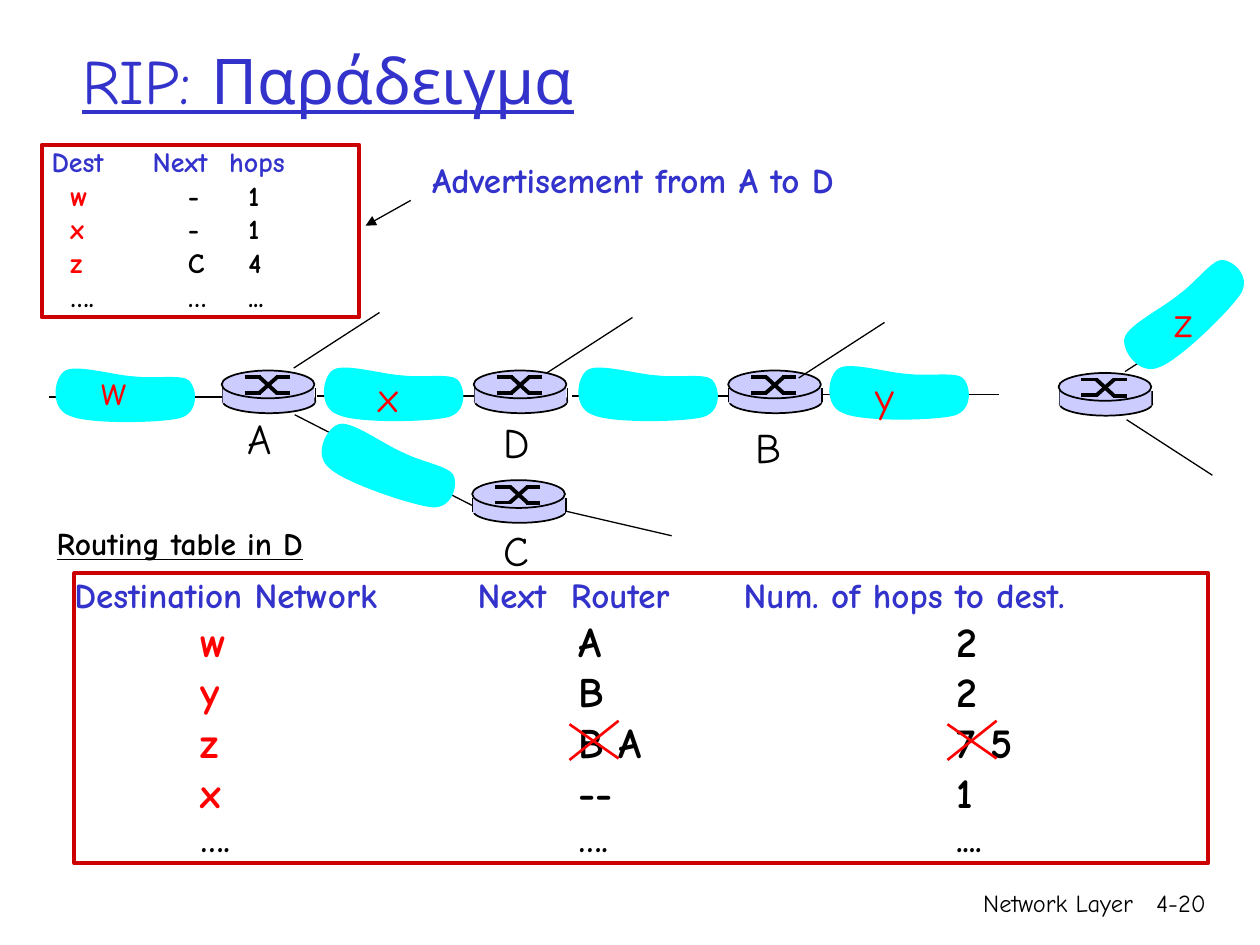
from lxml import etree
from pptx import Presentation
from pptx import util as u
from pptx.dml.color import RGBColor
from pptx.enum import shapes, text
from pptx.oxml import ns

FONT = "Comic Neue"
BLACK, BLUE, RED = "000000", "3333CC", "FF0000"
FRAME, BODY, CLOUD = "CC0000", "CCCCFF", "00FFFF"

# Lengths are centimetres throughout
CLOUD_SIZE = (3.05, 1.22)
CLOUD_START = (1.73, 0.25)
CLOUD_CURVES = [
    ((1.32, 0.23), (0.56, 0), (0.33, 0.13)),
    ((0.1, 0.25), (0, 0.89), (0.41, 1.04)),
    ((0.79, 1.22), (2.24, 1.19), (2.64, 1.09)),
    ((3.05, 0.97), (2.97, 0.46), (2.82, 0.33)),
    ((2.67, 0.2), (2.13, 0.3), CLOUD_START),
]
ROUTER_CROSS = [
    (0.46, 0.13, 0.79, 0.13), (1.09, 0.46, 1.37, 0.46), (0.76, 0.13, 1.12, 0.46),
    (0.46, 0.45, 0.79, 0.45), (1.09, 0.13, 1.37, 0.13), (0.76, 0.45, 1.12, 0.13),
]


def color(value):
    return RGBColor.from_string(value)


class Sketch:
    def __init__(self, slide):
        self.slide = slide

    def style(self, span, size, shade, bold=False, underline=False):
        span.font.name = FONT
        span.font.size = u.Pt(size)
        span.font.bold = bold
        span.font.underline = underline
        span.font.color.rgb = color(shade)

    def title(self, words, left, top, width, height):
        box = self.slide.shapes.title
        box.left, box.top, box.width, box.height = map(u.Cm, (left, top, width, height))
        box.text_frame.text = words
        box.text_frame.vertical_anchor = text.MSO_ANCHOR.MIDDLE
        para = box.text_frame.paragraphs[0]
        para.alignment = text.PP_ALIGN.LEFT
        self.style(para.runs[0], 36, BLUE, underline=True)

    def label(self, words, left, top, width, height=1.27, size=24, shade=BLACK,
              wrap=False, align=text.PP_ALIGN.LEFT, **look):
        box = self.slide.shapes.add_textbox(*map(u.Cm, (left, top, width, height)))
        box.text_frame.word_wrap = wrap
        box.text_frame.text = words
        para = box.text_frame.paragraphs[0]
        para.alignment = align
        self.style(para.runs[0], size, shade, **look)

    def line(self, x1, y1, x2, y2, shade=BLACK, weight=0.75, arrow=False):
        link = self.slide.shapes.add_connector(
            shapes.MSO_CONNECTOR.STRAIGHT, *map(u.Cm, (x1, y1, x2, y2)))
        link.line.color.rgb = color(shade)
        link.line.width = u.Pt(weight)
        if arrow:
            etree.SubElement(link.line._get_or_add_ln(), ns.qn("a:tailEnd"), type="triangle")
        etree.SubElement(link._element.spPr, ns.qn("a:effectLst"))

    def solid(self, kind, left, top, width, height, fill=BODY, edge=BLACK, weight=1):
        shape = self.slide.shapes.add_shape(kind, *map(u.Cm, (left, top, width, height)))
        shape.shadow.inherit = False
        if fill:
            shape.fill.solid()
            shape.fill.fore_color.rgb = color(fill)
        else:
            shape.fill.background()
        if edge:
            shape.line.color.rgb = color(edge)
            shape.line.width = u.Pt(weight)
        else:
            shape.line.fill.background()
        return shape

    def router(self, x, y):
        oval, block = shapes.MSO_SHAPE.OVAL, shapes.MSO_SHAPE.RECTANGLE
        self.solid(oval, x + 0.02, y + 0.38, 1.87, 0.48)
        for side in (0.02, 1.89):
            self.line(x + side, y + 0.36, x + side, y + 0.64, weight=1)
        self.solid(block, x + 0.02, y + 0.36, 1.85, 0.3, edge=None)
        self.solid(oval, x, y, 1.87, 0.56)
        for x1, y1, x2, y2 in ROUTER_CROSS:
            self.line(x + x1, y + y1, x + x2, y + y2, weight=2.25)

    def cloud(self, x, y, rotation=0):
        width, height = map(u.Cm, CLOUD_SIZE)
        builder = self.slide.shapes.build_freeform(u.Cm(x), u.Cm(y))
        builder.add_line_segments([(u.Cm(x) + width, u.Cm(y) + height)])
        shape = builder.convert_to_shape()
        # Fill the frame with curves, which the builder cannot draw
        outline = next(shape._element.iter(ns.qn("a:path")))
        for step in list(outline):
            outline.remove(step)
        for tag, points in [("a:moveTo", [CLOUD_START])] + [
                ("a:cubicBezTo", curve) for curve in CLOUD_CURVES]:
            step = etree.SubElement(outline, ns.qn(tag))
            for across, down in points:
                etree.SubElement(step, ns.qn("a:pt"),
                                 x=str(int(u.Cm(across))), y=str(int(u.Cm(down))))
        etree.SubElement(outline, ns.qn("a:close"))
        shape.rotation = rotation
        shape.shadow.inherit = False
        shape.fill.solid()
        shape.fill.fore_color.rgb = color(CLOUD)
        shape.line.fill.background()

    def listing(self, rows, left, top, width, height, head_stops, stops, sizes):
        """Framed rows whose columns are set by tab stops."""
        box = self.solid(shapes.MSO_SHAPE.RECTANGLE, left, top, width, height,
                         fill=None, edge=FRAME, weight=2.25)
        frame = box.text_frame
        frame.margin_left = frame.margin_right = frame.margin_top = frame.margin_bottom = 0
        frame.vertical_anchor = text.MSO_ANCHOR.TOP
        frame.word_wrap = True
        for r, words in enumerate(rows):
            para = frame.add_paragraph() if r else frame.paragraphs[0]
            para.alignment = text.PP_ALIGN.LEFT
            places = stops if r else head_stops
            tabs = etree.SubElement(para._p.get_or_add_pPr(), ns.qn("a:tabLst"))
            for place in filter(None, places):
                etree.SubElement(tabs, ns.qn("a:tab"), pos=str(int(u.Cm(place))), algn="l")
            first = BLUE if r == 0 else BLACK if r == len(rows) - 1 else RED
            rest = BLACK if r else BLUE
            lead = "\t" if places[0] else ""
            for words_part, shade in ((lead + words[0], first),
                                      ("\t" + "\t".join(words[1:]), rest)):
                span = para.add_run()
                span.text = words_part
                self.style(span, sizes[r], shade, bold=True)


def main():
    deck = Presentation()
    deck.slide_width, deck.slide_height = u.Cm(25.4), u.Cm(19.05)
    page = deck.slides.add_slide(deck.slide_layouts[5])
    sketch = Sketch(page)

    # Title and footer
    sketch.title("RIP: Παράδειγμα", 1.4, 0, 21.59, 3.18)
    for words, left, width in (("Network Layer", 15.04, 8.05), ("4-20", 22.68, 1.88)):
        sketch.label(words, left, 17.78, width, size=14, wrap=True,
                     align=text.PP_ALIGN.RIGHT)

    # Routing table in D
    sketch.listing(
        [("Destination Network", "Next", "Router", "Num. of hops to dest."),
         ("w", "A", "2"), ("y", "B", "2"), ("z", "B A", "7 5"),
         ("x", "--", "1"), ("….", "….", "....")],
        1.5, 11.56, 22.86, 5.84, (0, 8.13, 10.01, 13.49), (2.54, 10.16, 17.78),
        (20, 24, 24, 24, 24, 20))
    sketch.label("Routing table in D", 0.89, 10.44, 6.12, 1.02, size=18,
                 bold=True, underline=True)

    # Network: cables, routers, side links, clouds
    for x, y in ((0.99, 8), (6.4, 7.98), (11.53, 7.98), (16.59, 7.95)):
        sketch.line(x, y, x + 3.55, y, weight=1)
    for x, y in ((4.47, 7.47), (9.55, 7.47), (9.52, 9.68), (14.68, 7.47), (21.34, 7.52)):
        sketch.router(x, y)
    for x, y, rise in ((5.92, 7.42, -1.12), (11.02, 7.52, -1.12), (16.1, 7.62, -1.12),
                       (22.68, 7.49, -1.12), (22.71, 8.46, 1.12)):
        sketch.line(x, y, x + 1.73, y + rise)
    sketch.line(5.94, 8.36, 9.52, 10.19)
    sketch.line(11.43, 10.31, 13.54, 10.8)
    for x, y, rotation in ((0.99, 7.34, 0), (6.4, 7.32, 0), (11.53, 7.32, 0),
                           (16.59, 7.29, 0), (6.3, 8.79, 19.7), (22.35, 5.72, -43.2)):
        sketch.cloud(x, y, rotation)

    # Network and router names
    for name, x, y, width in (("w", 1.8, 7.21, 1.09), ("x", 7.39, 7.34, 1.02),
                              ("y", 17.4, 7.34, 0.94), ("z", 23.42, 5.84, 0.97)):
        sketch.label(name, x, y, width, shade=RED)
    for name, x, y, width in (("A", 4.75, 8.2, 1.12), ("C", 9.91, 10.44, 1.02),
                              ("D", 9.91, 8.28, 1.12), ("B", 14.99, 8.38, 1.04)):
        sketch.label(name, x, y, width)

    # Advertisement
    sketch.listing(
        [("Dest", "Next", "hops"), ("w", "-", "1"), ("x", "-", "1"),
         ("z", "C", "4"), ("….", "…", "...")],
        0.84, 2.92, 6.4, 3.48, (0.2, 2.24, 3.78), (0.58, 2.95, 4.17), (16,) * 5)
    sketch.label("Advertisement from A to D", 8.46, 3.07, 14.4, 1.12, size=20,
                 shade=BLUE, wrap=True, bold=True)
    sketch.line(8.28, 4.04, 7.37, 4.55, arrow=True)

    # Crosses over the replaced entries
    for x in (11.48, 19.1):
        sketch.line(x, 14.6, x + 0.99, 15.29, RED, 1.5)
        sketch.line(x, 15.32, x + 0.99, 14.53, RED, 1.5)

    deck.save("out.pptx")


if __name__ == "__main__":
    main()
